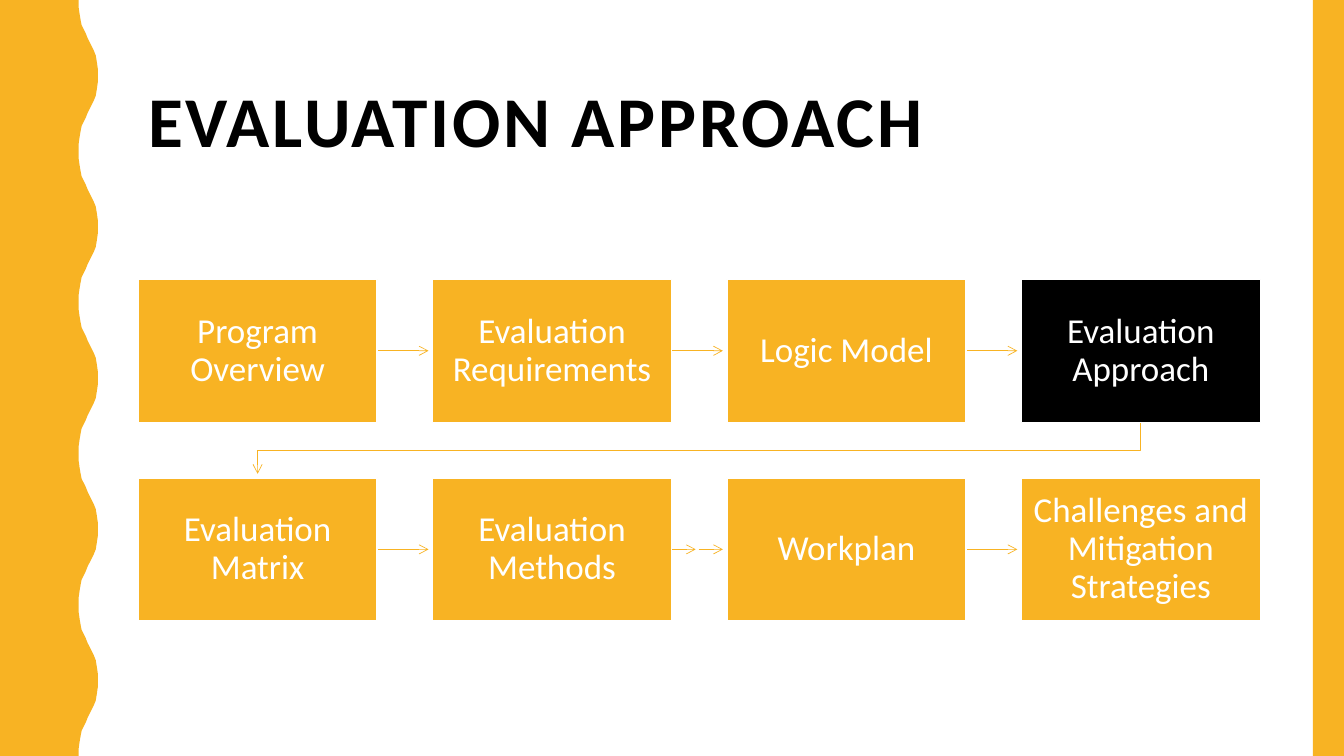
from dataclasses import dataclass

from lxml import etree
from pptx import Presentation
from pptx.dml.color import RGBColor
from pptx.enum.shapes import MSO_CONNECTOR, MSO_SHAPE
from pptx.enum.text import MSO_ANCHOR, MSO_AUTO_SIZE, PP_ALIGN
from pptx.oxml.ns import qn
from pptx.util import Inches, Pt

RECTANGLE = MSO_SHAPE.RECTANGLE
STRAIGHT = MSO_CONNECTOR.STRAIGHT
MIDDLE = MSO_ANCHOR.MIDDLE
LEFT, CENTER = PP_ALIGN.LEFT, PP_ALIGN.CENTER

AMBER = RGBColor(0xF8, 0xB3, 0x23)
BLACK = RGBColor(0x00, 0x00, 0x00)
WHITE = RGBColor(0xFF, 0xFF, 0xFF)
FONT = "Calibri"

# Slide and step grid, in inches
SLIDE_WIDTH, SLIDE_HEIGHT = 13.33, 7.5
GRID_LEFT, GRID_TOP = 1.37, 2.77
COLUMN_PITCH, ROW_PITCH = 2.92, 1.97
STEP_WIDTH, STEP_HEIGHT = 2.37, 1.42
COLUMNS = 4
GRID_WIDTH = (COLUMNS - 1) * COLUMN_PITCH + STEP_WIDTH
ARROW_GAP = 0.04
SPLIT_GAP = 0.03
STEP_INSET = 0.12
BAND_WIDTH = 0.31

# Half a wave of the left edge, from trough to crest
WAVE_PERIOD = 1.5
WAVE_COUNT = 5
HALF_WAVE = [
    (0.78, 0), (0.78, 0.07), (0.79, 0.14), (0.8, 0.2), (0.81, 0.25),
    (0.83, 0.29), (0.85, 0.33), (0.87, 0.38), (0.89, 0.42), (0.91, 0.46),
    (0.93, 0.5), (0.95, 0.55), (0.96, 0.61), (0.97, 0.68), (0.97, 0.75),
]


@dataclass
class Step:
    label: str
    fill: RGBColor = AMBER
    arrows: int = 1  # arrows leading to the next step in the row


STEPS = [
    Step("Program Overview"),
    Step("Evaluation Requirements"),
    Step("Logic Model"),
    Step("Evaluation Approach", fill=BLACK),
    Step("Evaluation Matrix"),
    Step("Evaluation Methods", arrows=2),
    Step("Workplan"),
    Step("Challenges and Mitigation Strategies"),
]


def write_text(shape, text: str, *, size: float, color: RGBColor,
               bold: bool = False, align=CENTER, inset: float = 0.1,
               tracking: float = 0) -> None:
    frame = shape.text_frame
    frame.word_wrap = True
    frame.auto_size = MSO_AUTO_SIZE.NONE
    frame.vertical_anchor = MIDDLE
    frame.margin_left = frame.margin_right = Inches(inset)
    frame.margin_top = frame.margin_bottom = Inches(min(inset, STEP_INSET))
    para = frame.paragraphs[0]
    para.alignment = align
    para.line_spacing = 0.9
    span = para.add_run()
    span.text = text
    span.font.name = FONT
    span.font.size = Pt(size)
    span.font.bold = bold
    span.font.color.rgb = color
    if tracking:
        span.font._element.set("spc", str(int(tracking * 100)))


def add_rectangle(page, left: float, top: float, width: float, height: float,
                  fill: RGBColor):
    box = page.shapes.add_shape(RECTANGLE, Inches(left), Inches(top),
                                Inches(width), Inches(height))
    box.shadow.inherit = False
    box.fill.solid()
    box.fill.fore_color.rgb = fill
    box.line.fill.background()
    return box


def add_outline(page, points: list, close: bool):
    builder = page.shapes.build_freeform(
        Inches(points[0][0]), Inches(points[0][1]))
    builder.add_line_segments(
        [(Inches(x), Inches(y)) for x, y in points[1:]], close=close)
    outline = builder.convert_to_shape()
    outline.shadow.inherit = False
    return outline


def style_arrow(line) -> None:
    line.color.rgb = AMBER
    line.width = Pt(0.5)
    properties = line._get_or_add_ln()
    etree.SubElement(properties, qn("a:tailEnd"), type="arrow")


def add_arrow(page, start: float, end: float, height: float) -> None:
    arrow = page.shapes.add_connector(
        STRAIGHT, Inches(start), Inches(height), Inches(end), Inches(height))
    style_arrow(arrow.line)
    etree.SubElement(arrow._element.spPr, qn("a:effectLst"))


def add_wave(page) -> None:
    crest_to_trough = [(x, WAVE_PERIOD - y) for x, y in HALF_WAVE[::-1]]
    wave = HALF_WAVE + crest_to_trough[1:]
    edge = [(x, y + index * WAVE_PERIOD)
            for index in range(WAVE_COUNT) for x, y in wave]
    shape = add_outline(page, [(0, 0), *edge, (0, SLIDE_HEIGHT)], close=True)
    shape.fill.solid()
    shape.fill.fore_color.rgb = AMBER
    shape.line.fill.background()


def add_row_return(page) -> None:
    """Arrow from the last step of the first row to the second row."""
    first = GRID_LEFT + STEP_WIDTH / 2
    last = first + (COLUMNS - 1) * COLUMN_PITCH
    top = GRID_TOP + STEP_HEIGHT
    bottom = GRID_TOP + ROW_PITCH
    middle = (top + bottom) / 2
    turn = add_outline(page, [(last, top), (last, middle), (first, middle),
                              (first, bottom - ARROW_GAP)], close=False)
    turn.fill.background()
    style_arrow(turn.line)


def add_step(page, index: int, step: Step) -> None:
    row, column = divmod(index, COLUMNS)
    left = GRID_LEFT + column * COLUMN_PITCH
    top = GRID_TOP + row * ROW_PITCH
    if column < COLUMNS - 1:
        start = left + STEP_WIDTH
        span = COLUMN_PITCH - STEP_WIDTH - ARROW_GAP
        length = (span - (step.arrows - 1) * SPLIT_GAP) / step.arrows
        for part in range(step.arrows):
            tail = start + part * (length + SPLIT_GAP)
            add_arrow(page, tail, tail + length, top + STEP_HEIGHT / 2)
    box = add_rectangle(page, left, top, STEP_WIDTH, STEP_HEIGHT, step.fill)
    box.line.color.rgb = WHITE
    box.line.width = Pt(1)
    write_text(box, step.label, size=25, color=WHITE, inset=STEP_INSET)


def main() -> None:
    deck = Presentation()
    deck.slide_width = Inches(SLIDE_WIDTH)
    deck.slide_height = Inches(SLIDE_HEIGHT)
    page = deck.slides.add_slide(deck.slide_layouts[5])
    page.background.fill.solid()
    page.background.fill.fore_color.rgb = WHITE

    # Title
    title = page.shapes.title
    title.left, title.top = Inches(GRID_LEFT), Inches(0.42)
    title.width, title.height = Inches(GRID_WIDTH), Inches(1.63)
    write_text(title, "EVALUATION APPROACH", size=51, color=BLACK, bold=True,
               align=LEFT, tracking=2)

    # Side decoration
    add_wave(page)
    add_rectangle(page, SLIDE_WIDTH - BAND_WIDTH, 0, BAND_WIDTH, SLIDE_HEIGHT,
                  AMBER)

    # Process steps
    add_row_return(page)
    for index, step in enumerate(STEPS):
        add_step(page, index, step)

    deck.save("out.pptx")


if __name__ == "__main__":
    main()
